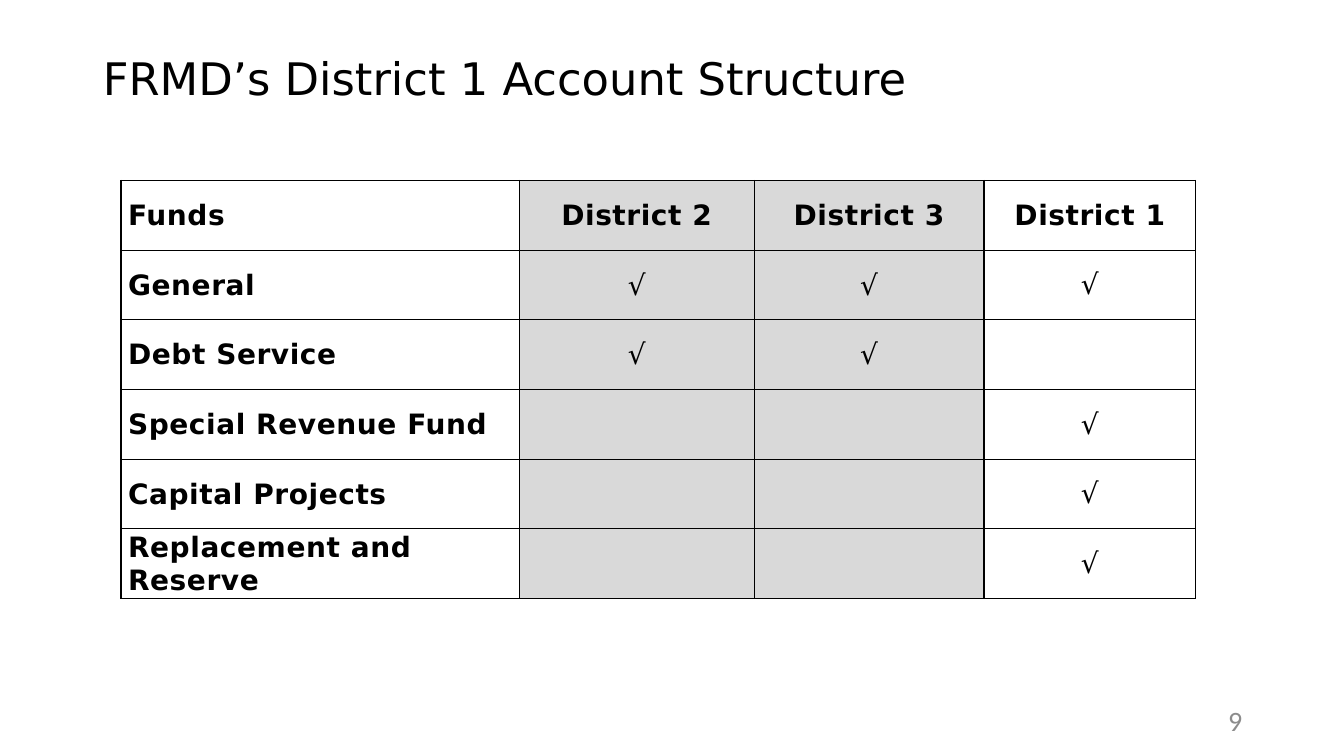
from pptx import Presentation
from pptx.dml.color import RGBColor
from pptx.enum.text import MSO_ANCHOR as Anchor, PP_ALIGN as Align
from pptx.oxml import parse_xml
from pptx.oxml.ns import nsdecls
from pptx.util import Pt

PX = 9144  # EMU, 100 px to the inch


def style(para, font, size, color, bold=False, align=Align.LEFT):
    para.alignment = align
    para.font.name = font
    para.font.size = Pt(size)
    para.font.bold = bold
    para.font.color.rgb = RGBColor.from_string(color)


def add_borders(cell):
    props = cell._tc.get_or_add_tcPr()
    for i, side in enumerate("LRTB"):
        props.insert(i, parse_xml(
            f'<a:ln{side} {nsdecls("a")} w="12700"><a:solidFill>'
            f'<a:srgbClr val="000000"/></a:solidFill></a:ln{side}>'))


deck = Presentation()
deck.slide_width, deck.slide_height = 1333 * PX, 750 * PX
slide = deck.slides.add_slide(deck.slide_layouts[5])

title = slide.shapes.title
title.left, title.top, title.width, title.height = (
    92 * PX, 40 * PX, 1150 * PX, 81 * PX)
title.text_frame.text = "FRMD’s District 1 Account Structure"
title.text_frame.vertical_anchor = Anchor.MIDDLE
para = title.text_frame.paragraphs[0]
style(para, "DejaVu Sans", 32, "000000")
para.line_spacing = 0.9

number = slide.shapes.add_textbox(942 * PX, 695 * PX, 300 * PX, 40 * PX).text_frame
number.word_wrap = True
number.vertical_anchor = Anchor.MIDDLE
number.text = "9"
style(number.paragraphs[0], "Calibri", 20, "8C8C8C", align=Align.RIGHT)

rows = [
    ["Funds", "District 2", "District 3", "District 1"],
    ["General", "√", "√", "√"],
    ["Debt Service", "√", "√", ""],
    ["Special Revenue Fund", "", "", "√"],
    ["Capital Projects", "", "", "√"],
    ["Replacement and Reserve", "", "", "√"],
]
widths = [395, 233, 228, 210]
fills = ["FFFFFF", "D9D9D9", "D9D9D9", "FFFFFF"]
funds = slide.shapes.add_table(
    len(rows), len(widths), 120 * PX, 179 * PX, sum(widths) * PX, 415 * PX).table
for col, width in zip(funds.columns, widths):
    col.width = width * PX

for r, row in enumerate(rows):
    for c, text in enumerate(row):
        cell = funds.cell(r, c)
        cell.fill.solid()
        cell.fill.fore_color.rgb = RGBColor.from_string(fills[c])
        add_borders(cell)
        cell.vertical_anchor = Anchor.MIDDLE
        last = c == len(widths) - 1
        cell.margin_left = cell.margin_right = 0 if last else 7 * PX
        cell.margin_top = 0 if last else PX
        cell.margin_bottom = 0
        cell.text = text
        para = cell.text_frame.paragraphs[0]
        style(para, "DejaVu Sans", 20, "000000", bold=r == 0 or c == 0,
              align=Align.CENTER if c else Align.LEFT)
        para.space_before = para.space_after = Pt(3)
        for run in para.runs:
            run._r.get_or_add_rPr().set("spc", "40")

deck.save("out.pptx")
